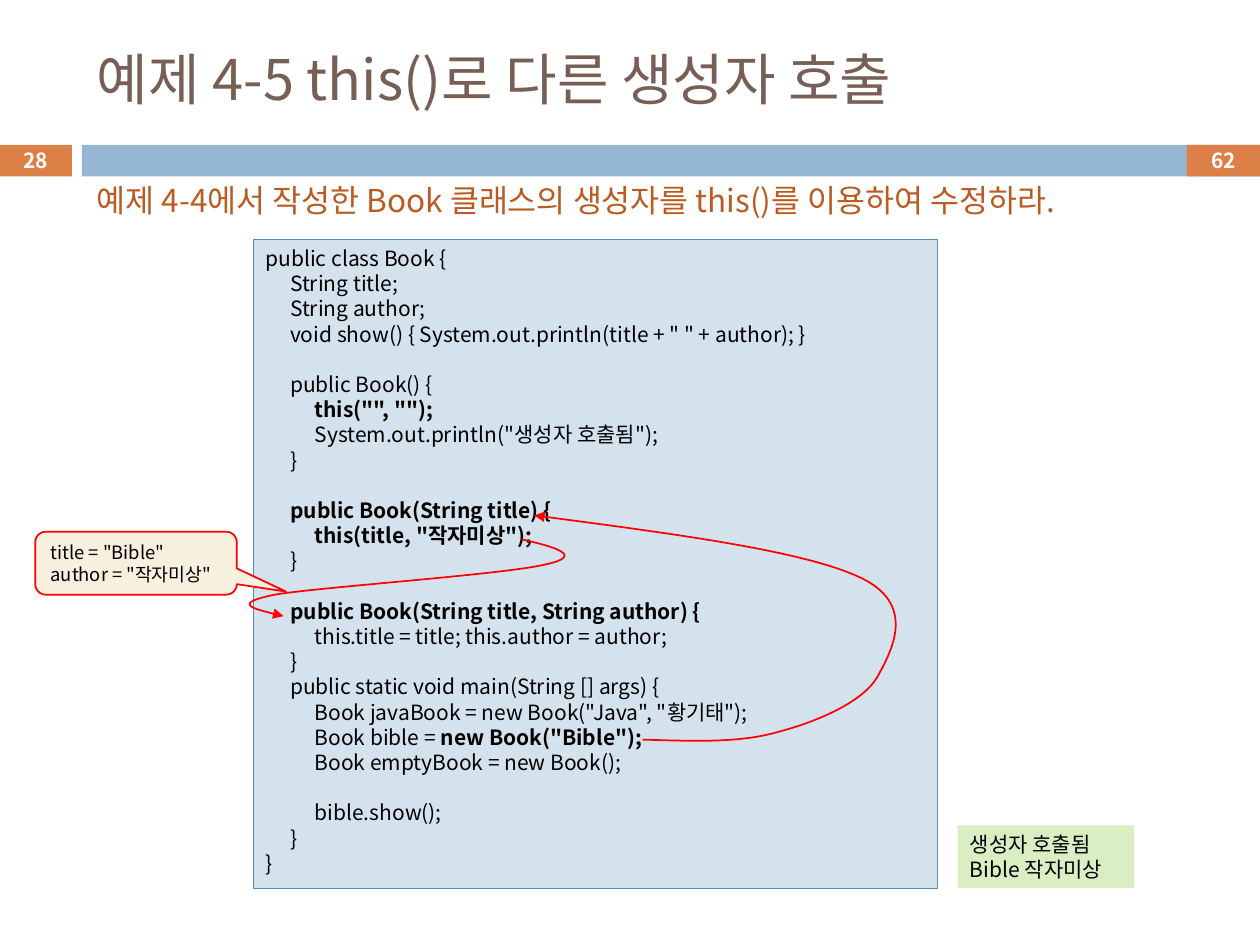
from lxml.etree import SubElement
from pptx import Presentation
from pptx.dml.color import RGBColor
from pptx.enum.shapes import MSO_SHAPE
from pptx.enum.text import MSO_ANCHOR, PP_ALIGN
from pptx.oxml.ns import qn
from pptx.util import Inches, Pt

COLUMNS, ROWS = 100, 75
WIDTH, HEIGHT = Inches(10), Inches(7.5)
FONT = "Noto Sans CJK KR"
LEADING = 1.2
TAB = 0.195
BLACK, WHITE, RED, ORANGE = "000000", "FFFFFF", "FF0000", "DD8047"

CODE = [
    [(0, "public class Book {"), (1, "String title;"), (1, "String author;"),
     (1, 'void show() { System.out.println(title + " " + author); }')],
    [(1, "public Book() {"), (2, "", 'this("", "");'),
     (2, 'System.out.println("생성자 호출됨");'), (1, "}")],
    [(1, "", "public Book(String title) {"),
     (2, "", 'this(title, "작자미상");'), (1, "}")],
    [(1, "", "public Book(String title, String author) {"),
     (2, "this.title = title; this.author = author;"), (1, "}"),
     (1, "public static void main(String [] args) {"),
     (2, 'Book javaBook = new Book("Java", "황기태");'),
     (2, "Book bible = ", 'new Book("Bible");'),
     (2, "Book emptyBook = new Book();")],
    [(2, "bible.show();"), (1, "}"), (0, "}")],
]
CALL_FROM_MAIN = [
    (51, 58.7), (54.8, 58.8), (58.6, 59), (61.7, 58.1),
    (64.8, 57.3), (68.6, 55.7), (69.7, 53.6),
    (70.8, 51.6), (72.8, 47.9), (68.2, 45.8),
    (63.7, 43.7), (53, 42.3), (42.4, 40.9)]
CALL_FROM_THIS = [
    (41.4, 42.8), (44, 43.4), (46.5, 44.1), (43.3, 44.8),
    (40, 45.6), (25.3, 46.6), (21.8, 47.2),
    (18.4, 47.9), (20.4, 48.4), (22.5, 48.9)]


def color(hex_value):
    """Turn a hex string into a colour."""
    return RGBColor.from_string(hex_value)


def x_at(column):
    """Convert grid columns to a horizontal length."""
    return round(WIDTH * column / COLUMNS)


def y_at(row):
    """Convert grid rows to a vertical length."""
    return round(HEIGHT * row / ROWS)


def place(box):
    """Convert a grid box to slide lengths."""
    left, top, width, height = box
    return x_at(left), y_at(top), x_at(width), y_at(height)


def add_panel(slide, box, fill, line=None, line_width=1, preset=MSO_SHAPE.RECTANGLE):
    """Add a filled panel with an optional outline."""
    panel = slide.shapes.add_shape(preset, *place(box))
    panel.shadow.inherit = False
    panel.fill.solid()
    panel.fill.fore_color.rgb = color(fill)
    if line:
        panel.line.color.rgb = color(line)
        panel.line.width = Pt(line_width)
    else:
        panel.line.fill.background()
    panel.text_frame.vertical_anchor = MSO_ANCHOR.TOP
    panel.text_frame.word_wrap = True
    return panel


def add_run(paragraph, text, size, ink, bold=False):
    """Add one run in the slide font for Latin and Korean."""
    run = paragraph.add_run()
    run.text = text
    run.font.size, run.font.bold, run.font.name = Pt(size), bold, FONT
    run.font.color.rgb = color(ink)
    SubElement(run.font._element, qn("a:ea"), typeface=FONT)


def next_paragraph(frame, first, size):
    """Return a left-aligned paragraph with the common leading."""
    paragraph = frame.paragraphs[0] if first else frame.add_paragraph()
    paragraph.alignment = PP_ALIGN.LEFT
    paragraph.line_spacing = Pt(size * LEADING)
    return paragraph


def write_lines(frame, lines, size):
    """Write plain black lines."""
    for index, line in enumerate(lines):
        add_run(next_paragraph(frame, index == 0, size), line, size, BLACK)


def add_label(slide, box, text, size, ink, bold=False,
              align=PP_ALIGN.LEFT, anchor=MSO_ANCHOR.MIDDLE):
    """Add a one-line text box."""
    frame = slide.shapes.add_textbox(*place(box)).text_frame
    frame.word_wrap = True
    frame.vertical_anchor = anchor
    frame.paragraphs[0].alignment = align
    add_run(frame.paragraphs[0], text, size, ink, bold)


def add_header(slide, box):
    """Add the title, the colour band with its numbers and the task."""
    left, top, width, height = box
    number_width, band_top, band_height = 5.8, top + 11.5, 2.5
    add_panel(slide, (left + 6.5, band_top, width - 6.5, band_height), "94B6D2")
    for number, column in (("28", left - 0.1), ("62", left + width - number_width)):
        add_panel(slide, (column, band_top, number_width, band_height), ORANGE)
        add_label(slide, (column, band_top - 0.15, number_width, 2.7), number,
                  11.9, WHITE, True, PP_ALIGN.CENTER)
    add_label(slide, (left + 6.7, top + 2.5, 89.2, 7.4),
              "예제 4-5 this()로 다른 생성자 호출", 32, "775F55")
    add_label(slide, (left + 6.7, top + height - 4, 85.6, 4),
              "예제 4-4에서 작성한 Book 클래스의 생성자를 this()를 이용하여 수정하라.",
              18, "B95B22", anchor=MSO_ANCHOR.TOP)


def set_tabs(paragraph):
    """Set the two indent stops of the code."""
    stops = SubElement(paragraph._p.get_or_add_pPr(), qn("a:tabLst"))
    for depth in (1, 2):
        SubElement(stops, qn("a:tab"), pos=str(Inches(TAB * depth)), algn="l")


def add_code(slide, box, size=12):
    """Add the code panel, with a gap between blocks."""
    frame = add_panel(slide, box, "D4E2ED", "558BB8", 0.75).text_frame
    for block_index, block in enumerate(CODE):
        for line_index, (depth, plain, *strong) in enumerate(block):
            paragraph = next_paragraph(frame, block_index + line_index == 0, size)
            if block_index and line_index == 0:
                paragraph.space_before = Pt(size * LEADING)
            set_tabs(paragraph)
            if depth or plain:
                add_run(paragraph, "\t" * depth + plain, size, BLACK)
            for text in strong:
                add_run(paragraph, text, size, BLACK, True)


def add_output(slide, box):
    """Add the program output."""
    panel = add_panel(slide, box, "DAEEC4")
    write_lines(panel.text_frame, ["생성자 호출됨", "Bible 작자미상"], 12)


def add_call_arrow(slide, box, points):
    """Add a curved call arrow through cubic control points."""
    left, top, width, height = place(box)
    builder = slide.shapes.build_freeform(left, top)
    builder.add_line_segments([(left + width, top + height)], close=False)
    arrow = builder.convert_to_shape()
    arrow.shadow.inherit = False
    arrow.fill.background()
    arrow.line.color.rgb = color(RED)
    arrow.line.width = Pt(1)
    SubElement(arrow.line._get_or_add_ln(), qn("a:tailEnd"), type="triangle")
    curve = arrow._element.find(".//" + qn("a:path"))
    for segment in list(curve):
        curve.remove(segment)
    steps = [points[:1]] + [points[i:i + 3] for i in range(1, len(points), 3)]
    for step in steps:
        segment = SubElement(curve, qn("a:moveTo" if len(step) == 1 else "a:cubicBezTo"))
        for column, row in step:
            SubElement(segment, qn("a:pt"), x=str(x_at(column) - left),
                       y=str(y_at(row) - top))


def add_callout(slide, box):
    """Add the callout with the argument values."""
    callout = add_panel(slide, box, "F7F0DE", RED,
                        preset=MSO_SHAPE.ROUNDED_RECTANGULAR_CALLOUT)
    for index, value in enumerate((0.744, 0.451, 0.167)):
        callout.adjustments[index] = value
    callout.text_frame.word_wrap = False
    write_lines(callout.text_frame, ['title = "Bible"', 'author = "작자미상"'], 10.5)


def main():
    """Build the slide and save it."""
    deck = Presentation()
    deck.slide_width, deck.slide_height = WIDTH, HEIGHT
    slide = deck.slides.add_slide(deck.slide_layouts[6])
    add_header(slide, (0, 0, COLUMNS, 17.9))
    add_code(slide, (20.1, 19, 54.3, 51.5))
    add_output(slide, (76, 65.5, 14, 5))
    add_call_arrow(slide, (42.4, 40.9, 28.7, 17.9), CALL_FROM_MAIN)
    add_call_arrow(slide, (20, 42.8, 24.9, 6.1), CALL_FROM_THIS)
    add_callout(slide, (2.8, 42.2, 16, 5))
    deck.save("out.pptx")


if __name__ == "__main__":
    main()
